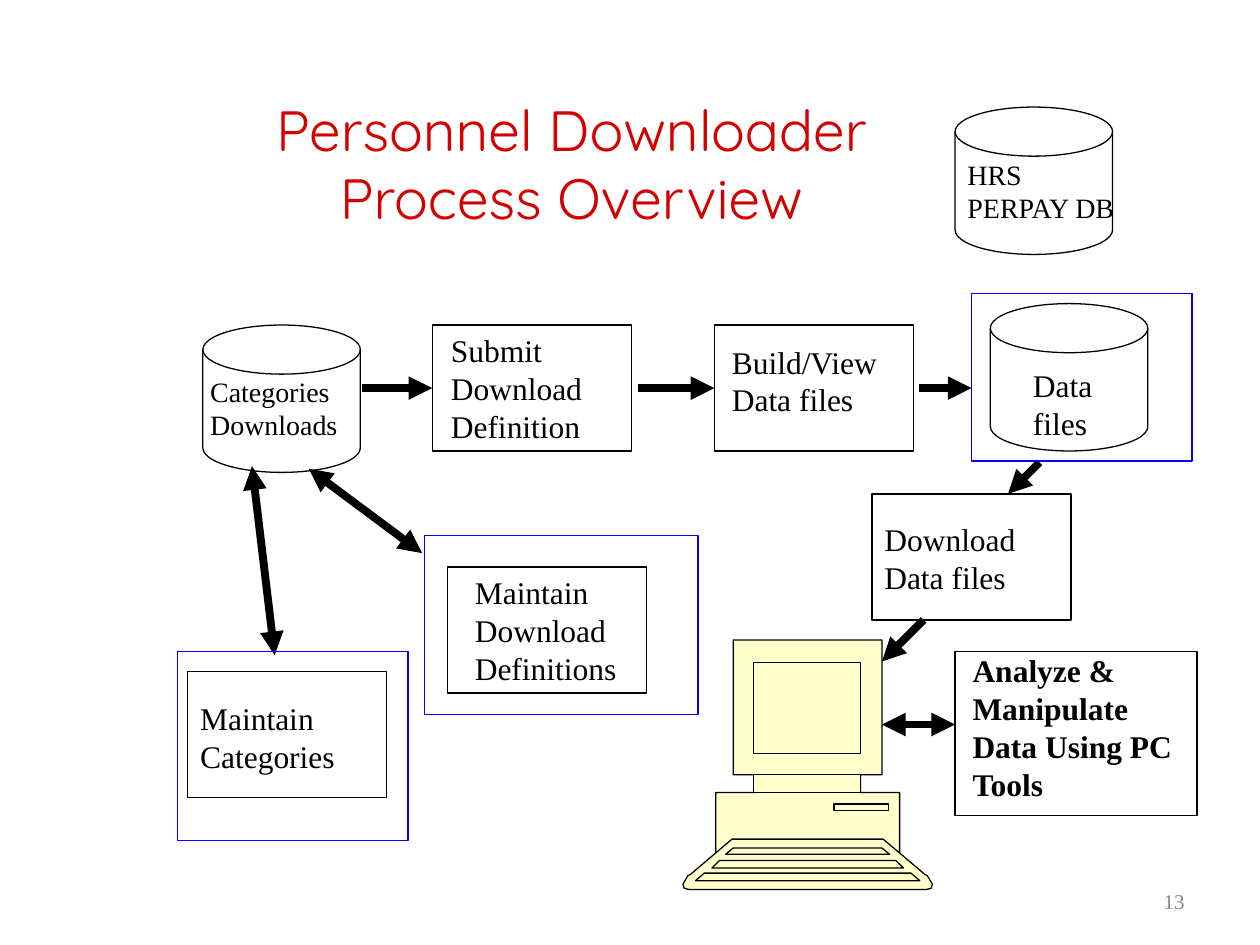
"""Builds the Personnel Downloader process overview slide."""
import pptx
import pptx.dml.color
import pptx.enum.shapes
import pptx.enum.text
import pptx.oxml
import pptx.util
from pptx.util import Inches

SHAPES = pptx.enum.shapes.MSO_SHAPE
ALIGN = pptx.enum.text.PP_ALIGN
MIDDLE = pptx.enum.text.MSO_ANCHOR.MIDDLE
NAMESPACE = 'xmlns:a="http://schemas.openxmlformats.org/drawingml/2006/main"'
BLACK, BLUE, RED, GRAY, WHITE, CREAM = "000000", "0000FF", "D40000", "898989", "FFFFFF", "FFFFCC"


def color(value):
    return pptx.dml.color.RGBColor.from_string(value)


class Diagram:
    serif = "Times New Roman"

    def __init__(self, slide):
        self.slide = slide
        self.shapes = slide.shapes

    def outline(self, shape, line=BLACK, fill=None):
        shape.shadow.inherit = False
        shape.line.color.rgb = color(line)
        shape.line.width = pptx.util.Pt(0.75)
        if fill:
            shape.fill.solid()
            shape.fill.fore_color.rgb = color(fill)
        else:
            shape.fill.background()
        return shape

    def set_text(self, frame, text, size, font=serif, ink=BLACK, bold=False, align=ALIGN.LEFT):
        frame.word_wrap = True
        paragraph = frame.paragraphs[0]
        paragraph.text = text.replace("\n", "\v")
        paragraph.alignment = align
        for run in paragraph.runs:
            run.font.size = pptx.util.Pt(size)
            run.font.name = font
            run.font.bold = bold
            run.font.color.rgb = color(ink)

    def title(self, text, left, top, width, height):
        title = self.shapes.title
        title.left, title.top = Inches(left), Inches(top)
        title.width, title.height = Inches(width), Inches(height)
        title.text_frame.vertical_anchor = MIDDLE
        self.set_text(title.text_frame, text, 32.4, "Quicksand", RED, align=ALIGN.CENTER)

    def label(self, text, left, top, width=1.58, height=0.7, size=18, **style):
        box = self.shapes.add_textbox(Inches(left), Inches(top), Inches(width), Inches(height))
        self.set_text(box.text_frame, text, size, **style)
        return box

    def box(self, left, top, width=1.58, height=1, kind=SHAPES.FLOWCHART_PROCESS, **style):
        shape = self.shapes.add_shape(kind, Inches(left), Inches(top), Inches(width), Inches(height))
        return self.outline(shape, **style)

    def disk(self, left, top):
        return self.box(left, top, 1.25, 1.17, SHAPES.FLOWCHART_MAGNETIC_DISK)

    def frame(self, left, top, width, height):
        return self.box(left, top, width, height, SHAPES.RECTANGLE, line=BLUE)

    def arrow(self, start, end, both=False, target=None):
        points = [Inches(value) for value in (*start, *end)]
        connector = self.shapes.add_connector(pptx.enum.shapes.MSO_CONNECTOR.STRAIGHT, *points)
        if target is not None:
            connector.end_connect(target, 1)
        connector.line.color.rgb = color(BLACK)
        connector.line.width = pptx.util.Pt(4.5)
        properties = connector._element.spPr
        for tag in ("headEnd", "tailEnd") if both else ("tailEnd",):
            properties.get_or_add_ln().append(
                pptx.oxml.parse_xml(f'<a:{tag} {NAMESPACE} type="triangle"/>'))
        properties.append(pptx.oxml.parse_xml(f"<a:effectLst {NAMESPACE}/>"))

    def polygon(self, points, closed=True):
        places = [(Inches(x), Inches(y)) for x, y in points]
        builder = self.shapes.build_freeform(*places[0])
        builder.add_line_segments(places[1:], close=closed)
        return self.outline(builder.convert_to_shape(), fill=CREAM)

    def computer(self, center=6.41):
        def mirrored(half):
            right = [(center + x, y) for x, y in half]
            return right + [(center - x, y) for x, y in reversed(half)]

        self.polygon(mirrored([
            (0.59, 5.08), (0.59, 6.15), (0.42, 6.15), (0.42, 6.29), (0.73, 6.29),
            (0.73, 6.77), (0.93, 6.94), (0.95, 6.95), (0.98, 7), (0.99, 7.02),
            (0.98, 7.05), (0.94, 7.06)]))
        self.polygon(mirrored([(0.73, 6.77), (0.6, 6.66)]), closed=False)
        for upper, top, lower, bottom in (
                (0.59, 6.73, 0.65, 6.78), (0.7, 6.83, 0.76, 6.89), (0.82, 6.93, 0.89, 6.99)):
            self.polygon(mirrored([(upper, top), (lower, bottom)]))
        for left, top, right, bottom in (
                (5.98, 5.26, 6.83, 5.98), (5.98, 6.15, 6.83, 6.29), (6.62, 6.38, 7.05, 6.43)):
            self.polygon([(left, top), (right, top), (right, bottom), (left, bottom)])


def main():
    presentation = pptx.Presentation()
    presentation.slide_width, presentation.slide_height = Inches(10), Inches(7.5)
    diagram = Diagram(presentation.slides.add_slide(presentation.slide_layouts[5]))
    diagram.title("Personnel Downloader\nProcess Overview", 1.57, 0.67, 5.93, 1.25)
    number = diagram.label("13", 7.17, 6.95, 2.33, 0.4, 12, ink=GRAY, align=ALIGN.RIGHT)
    number.text_frame.vertical_anchor = MIDDLE

    for left, top in ((7.86, 2.41), (1.61, 2.58), (7.58, 0.85)):
        diagram.disk(left, top)
    submit = diagram.box(3.43, 2.58)
    build = diagram.box(5.67, 2.58)
    diagram.box(6.92, 3.92)
    diagram.box(3.55, 4.5)
    diagram.box(1.49, 5.33, fill=WHITE)
    diagram.box(7.58, 5.17, 1.92, 1.3)
    diagram.computer()

    diagram.label("Maintain\nCategories", 1.49, 5.5)
    diagram.label("Maintain\nDownload\nDefinitions", 3.67, 4.5, height=1)
    diagram.label("Submit\nDownload\nDefinition", 3.48, 2.58, height=1)
    diagram.label("Build/View\nData files", 5.71, 2.67)
    diagram.label("Download\nData files", 6.92, 4.08)
    diagram.label("Categories\nDownloads", 1.57, 2.92, size=16)
    diagram.label("Data\nfiles", 8.1, 2.86, 0.83)
    diagram.label("HRS\nPERPAY DB", 7.58, 1.2, size=16)
    diagram.label("Analyze & Manipulate Data Using PC Tools", 7.62, 5.12, 1.92, 1.3, bold=True)

    diagram.arrow((2.18, 5.2), (2, 3.7), both=True)
    diagram.arrow((2.45, 3.72), (3.35, 4.39), both=True)
    diagram.arrow((7.58, 5.75), (7, 5.75), both=True)
    diagram.arrow((2.87, 3.08), (3.43, 3.08), target=submit)
    diagram.arrow((5.06, 3.08), (5.67, 3.08), target=build)
    diagram.arrow((7.29, 3.08), (7.71, 3.08))
    diagram.arrow((8.25, 3.67), (8, 3.92))
    diagram.arrow((7.33, 4.92), (7, 5.25))

    diagram.frame(3.37, 4.25, 2.17, 1.42)
    diagram.frame(1.41, 5.17, 1.83, 1.5)
    diagram.frame(7.71, 2.33, 1.75, 1.33)
    presentation.save("out.pptx")


if __name__ == "__main__":
    main()
